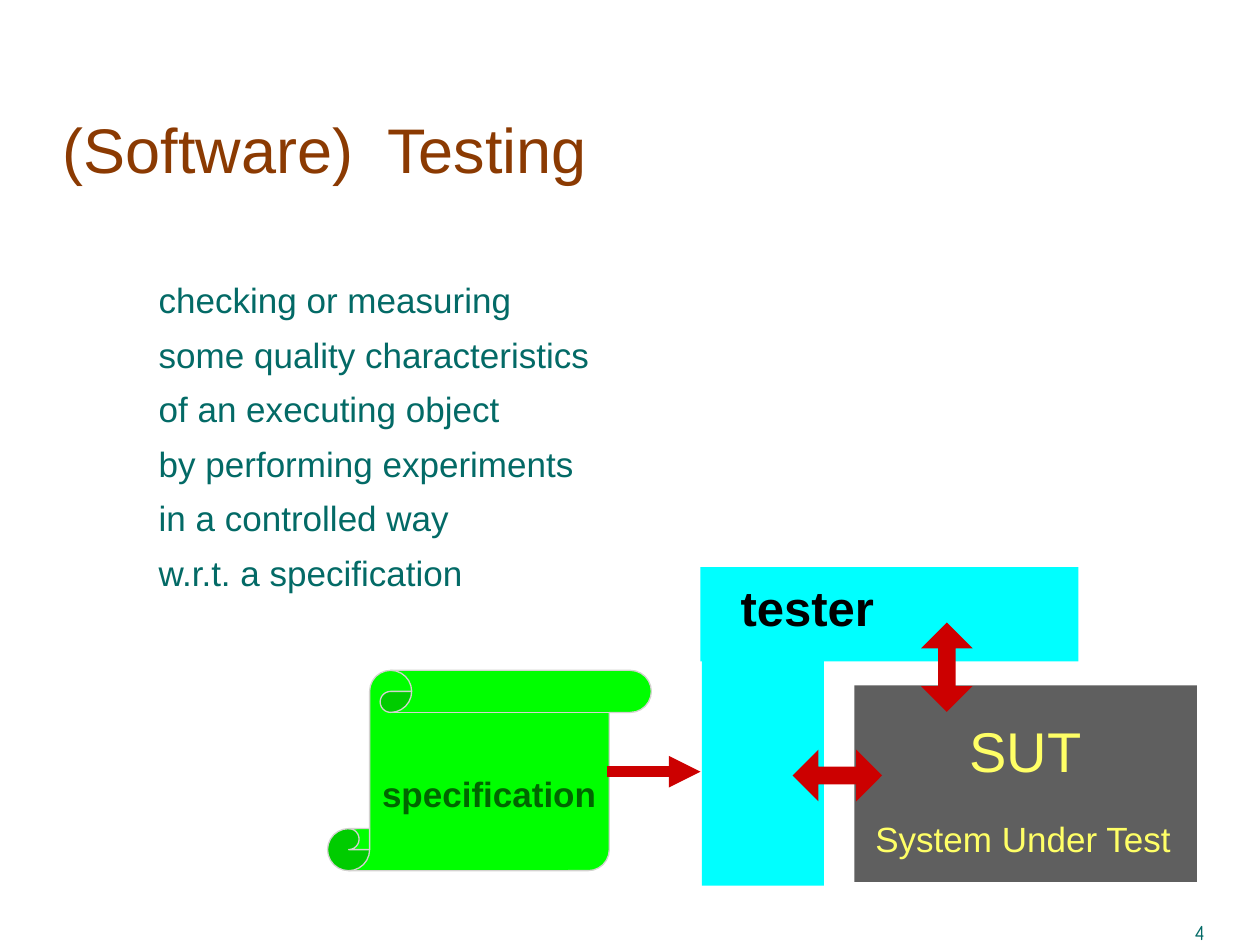
from dataclasses import dataclass

from lxml.etree import SubElement
from pptx import Presentation
from pptx.dml.color import RGBColor
from pptx.enum.shapes import MSO_CONNECTOR, MSO_SHAPE
from pptx.enum.text import MSO_ANCHOR, PP_ALIGN
from pptx.oxml.ns import qn
from pptx.util import Inches, Pt

COLUMNS, ROWS = 100, 75
UNIT = Inches(10) / COLUMNS


@dataclass(frozen=True)
class Theme:
    font: str = "Arial"
    number_font: str = "Comic Neue"
    title: str = "8B3A02"
    body: str = "036A66"
    tester: str = "00FFFF"
    tester_text: str = "000000"
    scroll: str = "00FF00"
    scroll_edge: str = "D4D2D0"
    scroll_text: str = "006600"
    system: str = "5F5F5F"
    system_text: str = "FFFF66"
    arrow: str = "CC0000"
    title_size: int = 36
    heading_size: int = 32
    tester_size: int = 28
    body_size: int = 20
    number_size: int = 12


THEME = Theme()


@dataclass(frozen=True)
class Box:
    """A region of the slide, in grid columns and rows."""
    left: float
    top: float
    width: float
    height: float

    def inner(self, left, top, width, height):
        return Box(self.left + left, self.top + top, width, height)

    def emu(self):
        return [round(length * UNIT)
                for length in (self.left, self.top, self.width, self.height)]


def write(holder, text, size, color, font=THEME.font, bold=False,
          align=PP_ALIGN.LEFT, anchor=MSO_ANCHOR.TOP, spacing=1.0,
          wrap=True, inset=None):
    frame = holder.text_frame
    frame.text = text
    frame.word_wrap = wrap
    frame.vertical_anchor = anchor
    if inset is not None:
        frame.margin_left = frame.margin_right = Inches(inset)
        frame.margin_top = frame.margin_bottom = Inches(inset)
    paragraph = frame.paragraphs[0]
    paragraph.alignment = align
    paragraph.line_spacing = spacing
    for run in paragraph.runs:
        run.font.name = font
        run.font.size = Pt(size)
        run.font.bold = bold
        run.font.color.rgb = RGBColor.from_string(color)


def add_text(slide, box, *args, **options):
    write(slide.shapes.add_textbox(*box.emu()), *args, **options)


def add_block(slide, box, kind, fill, edge=None):
    block = slide.shapes.add_shape(kind, *box.emu())
    block.shadow.inherit = False
    block.fill.solid()
    block.fill.fore_color.rgb = RGBColor.from_string(fill)
    if edge:
        block.line.color.rgb = RGBColor.from_string(edge)
        block.line.width = Pt(0.75)
    else:
        block.line.fill.background()
    return block


def add_title(slide, box):
    add_text(slide, box, "(Software)  Testing", THEME.title_size, THEME.title,
             spacing=0.95, wrap=False, inset=0)


def add_definition(slide, box):
    lines = ("checking or measuring", "some quality characteristics",
             "of an executing object", "by performing experiments",
             "in a controlled way", "w.r.t. a specification")
    add_text(slide, box, "\v".join(lines), THEME.body_size, THEME.body,
             spacing=1.3, inset=0.08)


def add_tester(slide, box):
    for arm in (box.inner(0, 0, box.width, 7.5),
                box.inner(0.1, 0.1, 9.7, box.height - 0.1)):
        add_block(slide, arm, MSO_SHAPE.RECTANGLE, THEME.tester)
    add_text(slide, box.inner(2.2, -0.4, 15.2, 6.4), "tester",
             THEME.tester_size, THEME.tester_text, bold=True,
             anchor=MSO_ANCHOR.BOTTOM)


def add_specification(slide, box, arrow_end):
    """Place the scroll and the arrow from it to the column arrow_end."""
    scroll = add_block(slide, box, MSO_SHAPE.VERTICAL_SCROLL,
                       THEME.scroll, THEME.scroll_edge)
    scroll.adjustments[0] = 0.21
    write(scroll, "specification", THEME.body_size, THEME.scroll_text,
          bold=True, anchor=MSO_ANCHOR.MIDDLE, spacing=1.6, wrap=False)

    start_x, y, _, _ = box.inner(22.2, 8.05, 0, 0).emu()
    arrow = slide.shapes.add_connector(
        MSO_CONNECTOR.STRAIGHT, start_x, y, round(arrow_end * UNIT), y)
    arrow.line.color.rgb = RGBColor.from_string(THEME.arrow)
    arrow.line.width = Pt(6)
    properties = arrow._element.spPr
    SubElement(properties.find(qn("a:ln")), qn("a:tailEnd"), type="triangle")
    SubElement(properties, qn("a:effectLst"))


def add_system(slide, box):
    system = add_block(slide, box, MSO_SHAPE.RECTANGLE, THEME.system)
    write(system, "SUT", THEME.heading_size, THEME.system_text,
          align=PP_ALIGN.CENTER, wrap=False, inset=0.25)
    add_text(slide, box.inner(0.5, 10, 25.8, 4.3), "System Under Test",
             THEME.body_size, THEME.system_text,
             align=PP_ALIGN.CENTER, wrap=False)


def add_exchanges(slide, box):
    """Place the double arrows across the top and left edges of the system."""
    for left, top, rotation in ((5.3, -5, 0), (-3.4, 3.6, 90)):
        arrow = add_block(slide, box.inner(left, top, 4.1, 7.1),
                          MSO_SHAPE.UP_DOWN_ARROW, THEME.arrow)
        arrow.adjustments[0] = 0.5
        arrow.adjustments[1] = 0.34
        arrow.rotation = rotation


def add_page_number(slide, box):
    add_text(slide, box, "4", THEME.number_size, THEME.body,
             font=THEME.number_font, align=PP_ALIGN.RIGHT)


def main():
    deck = Presentation()
    deck.slide_width = round(COLUMNS * UNIT)
    deck.slide_height = round(ROWS * UNIT)
    slide = deck.slides.add_slide(deck.slide_layouts[6])

    tester = Box(55.6, 45, 30, 25.3)
    system = Box(67.8, 54.4, 27.2, 15.6)
    add_page_number(slide, Box(87.4, 72.5, 9.2, 2.5))
    add_definition(slide, Box(11.8, 20.3, 41.6, 28.1))
    add_tester(slide, tester)
    add_specification(slide, Box(26, 53.2, 25.7, 15.9), tester.left)
    add_system(slide, system)
    add_exchanges(slide, system)
    add_title(slide, Box(5, 9.2, 90, 6.7))
    deck.save("out.pptx")


if __name__ == "__main__":
    main()
